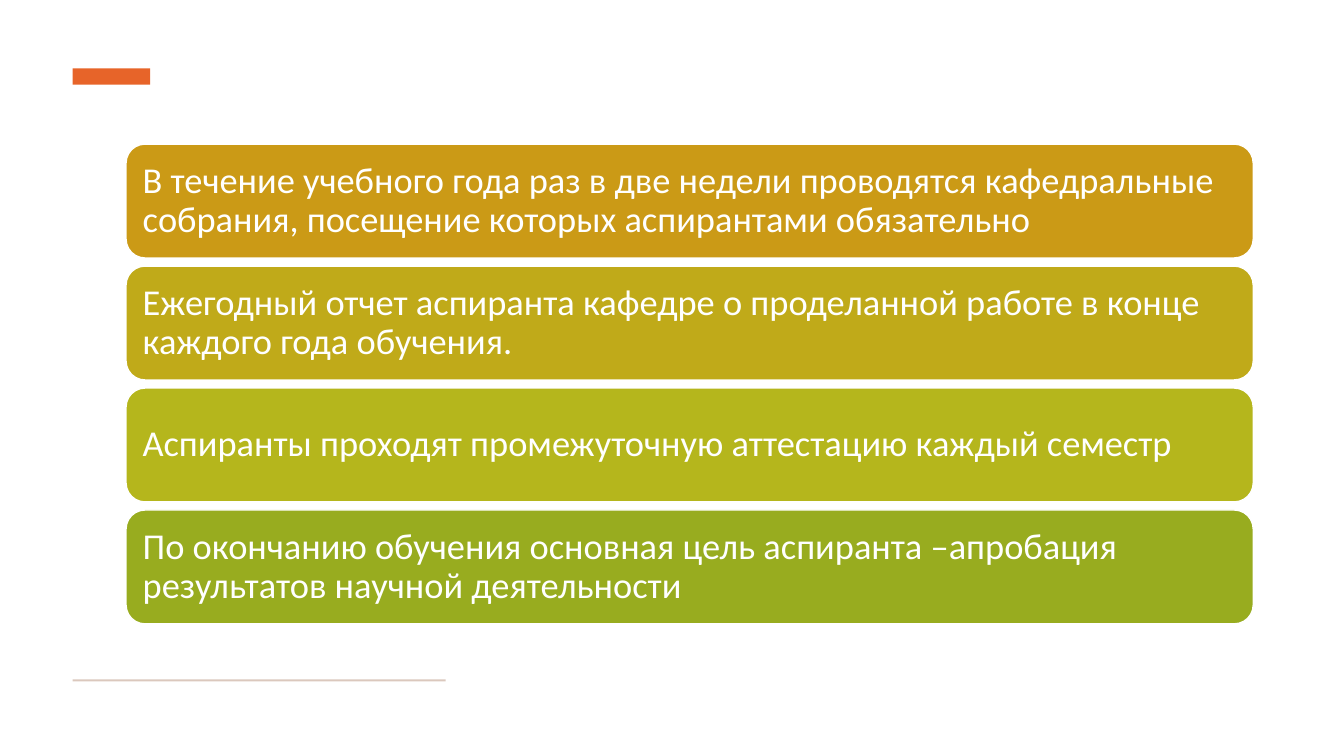
from dataclasses import dataclass

from pptx import Presentation
from pptx.dml.color import RGBColor
from pptx.enum.shapes import MSO_SHAPE as Preset
from pptx.enum.text import MSO_ANCHOR as Anchor, PP_ALIGN as Align
from pptx.shapes.autoshape import Shape
from pptx.slide import Slide
from pptx.util import Emu, Pt

EMU_PER_PX = 9144  # 100 px to the inch

WHITE = RGBColor(0xFF, 0xFF, 0xFF)
ORANGE = RGBColor(0xE7, 0x64, 0x29)
BEIGE = RGBColor(0xDB, 0xC8, 0xBD)
AMBER = RGBColor(0xCB, 0x9A, 0x16)
MUSTARD = RGBColor(0xC0, 0xAA, 0x19)
LIME = RGBColor(0xB5, 0xB6, 0x1C)
GREEN = RGBColor(0x98, 0xAC, 0x1F)

CARD_LEFT, CARD_TOP = 125, 143
CARD_WIDTH, CARD_HEIGHT = 1118, 113
CARD_PITCH = 121
CARD_INSET = 11


@dataclass(frozen=True)
class Box:
    left: int
    top: int
    width: int
    height: int


@dataclass(frozen=True)
class Card:
    text: str
    color: RGBColor


ACCENT_BAR = Box(72, 68, 77, 16)
FOOTER_RULE = Box(72, 674, 370, 2)

CARDS = (
    Card("В течение учебного года раз в две недели проводятся кафедральные "
         "собрания, посещение которых аспирантами обязательно", AMBER),
    Card("Ежегодный отчет аспиранта кафедре о проделанной работе в конце "
         "каждого года обучения.", MUSTARD),
    Card("Аспиранты проходят промежуточную аттестацию каждый семестр", LIME),
    Card("По окончанию обучения основная цель аспиранта –апробация "
         "результатов научной деятельности", GREEN),
)


def px(length: int) -> Emu:
    return Emu(length * EMU_PER_PX)


def add_filled_shape(slide: Slide, preset: Preset, box: Box, color: RGBColor) -> Shape:
    shape = slide.shapes.add_shape(
        preset, px(box.left), px(box.top), px(box.width), px(box.height))
    shape.shadow.inherit = False
    shape.fill.solid()
    shape.fill.fore_color.rgb = color
    shape.line.fill.background()
    return shape


def write_text(shape: Shape, text: str, *, size: int, color: RGBColor,
               inset: int, font: str = "Calibri", line_spacing: float = 0.9) -> None:
    frame = shape.text_frame
    frame.word_wrap = True
    frame.vertical_anchor = Anchor.MIDDLE
    frame.margin_left = frame.margin_right = px(inset)
    frame.margin_top = frame.margin_bottom = px(inset)
    paragraph = frame.paragraphs[0]
    paragraph.alignment = Align.LEFT
    paragraph.line_spacing = line_spacing
    run = paragraph.add_run()
    run.text = text
    run.font.name = font
    run.font.size = Pt(size)
    run.font.color.rgb = color


def add_card(slide: Slide, card: Card, row: int) -> None:
    box = Box(CARD_LEFT, CARD_TOP + row * CARD_PITCH, CARD_WIDTH, CARD_HEIGHT)
    shape = add_filled_shape(slide, Preset.ROUNDED_RECTANGLE, box, card.color)
    shape.line.color.rgb = WHITE
    shape.line.width = Pt(1)
    write_text(shape, card.text, size=26, color=WHITE, inset=CARD_INSET)


def main() -> None:
    presentation = Presentation()
    presentation.slide_width = px(1333)
    presentation.slide_height = px(750)
    slide = presentation.slides.add_slide(presentation.slide_layouts[6])
    slide.background.fill.solid()
    slide.background.fill.fore_color.rgb = WHITE

    add_filled_shape(slide, Preset.RECTANGLE, ACCENT_BAR, ORANGE)
    add_filled_shape(slide, Preset.RECTANGLE, FOOTER_RULE, BEIGE)
    for row, card in enumerate(CARDS):
        add_card(slide, card, row)

    presentation.save("out.pptx")


if __name__ == "__main__":
    main()
